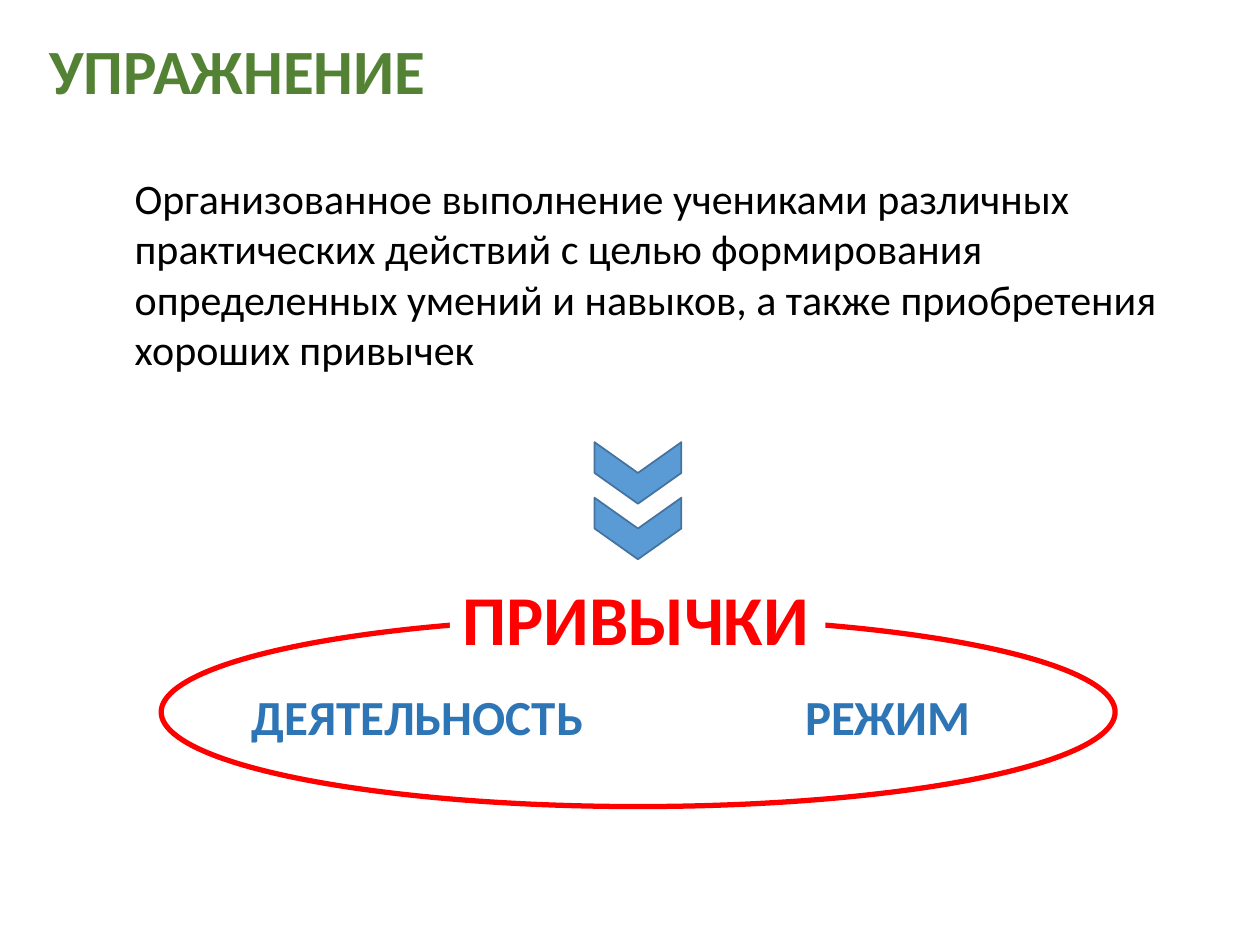
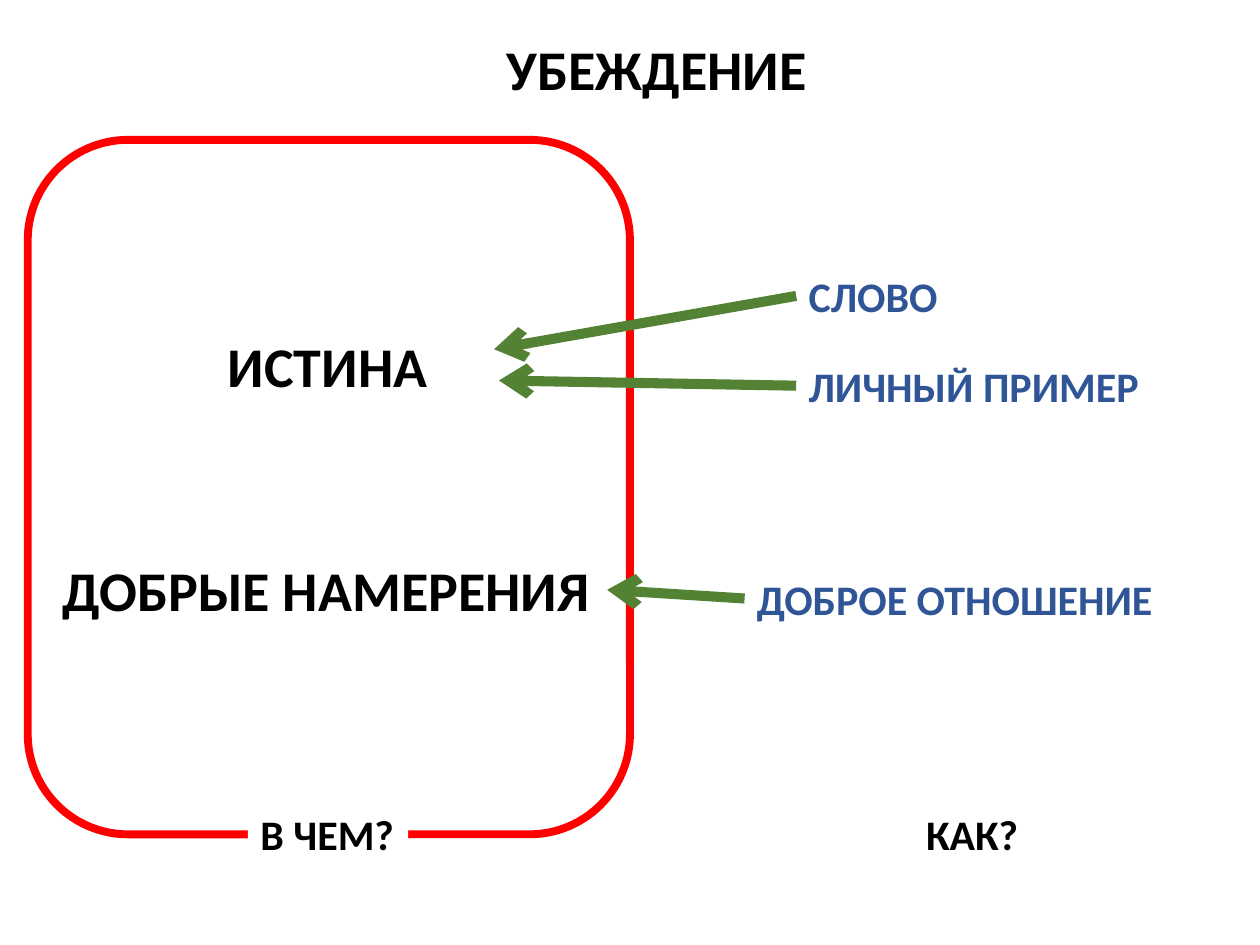
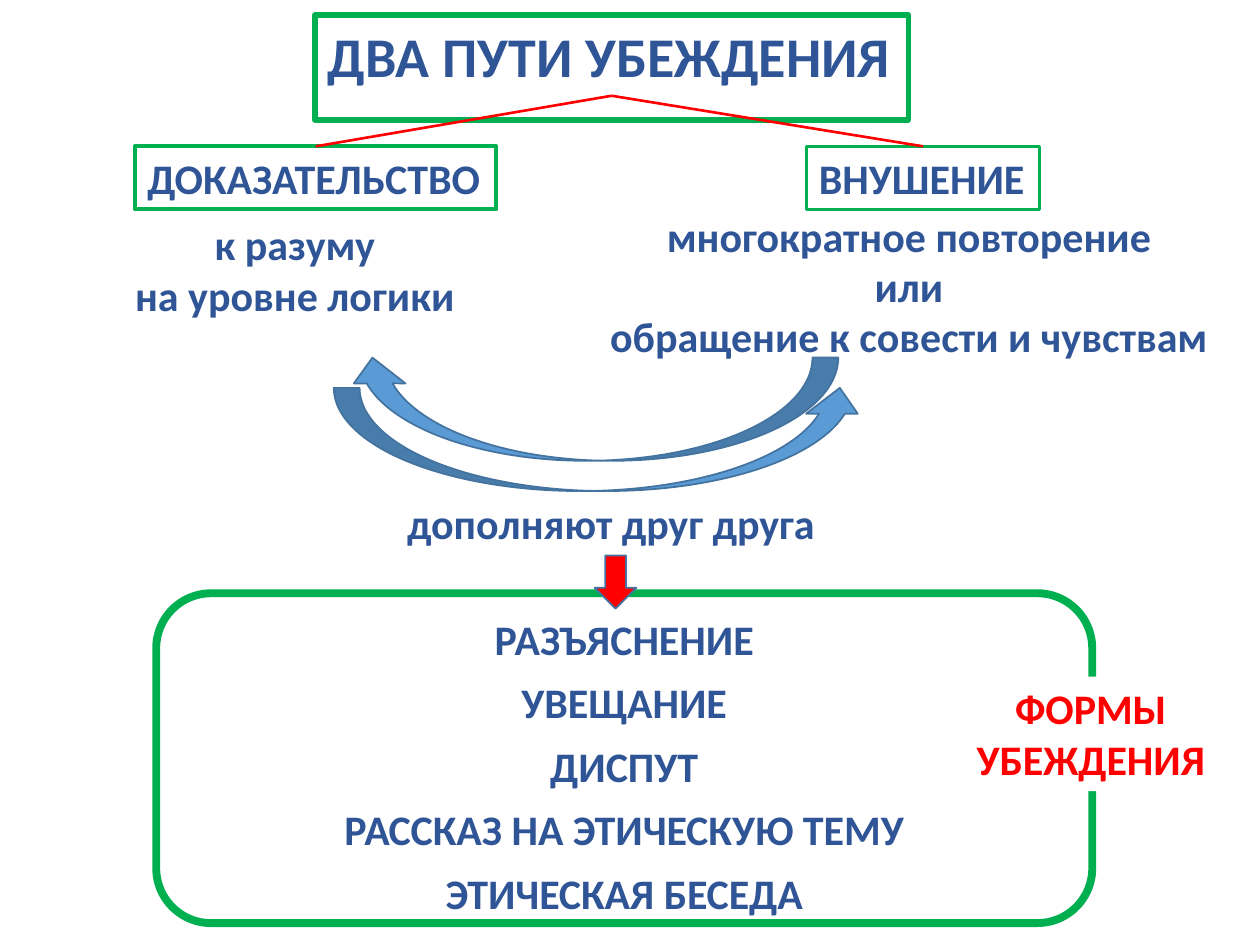
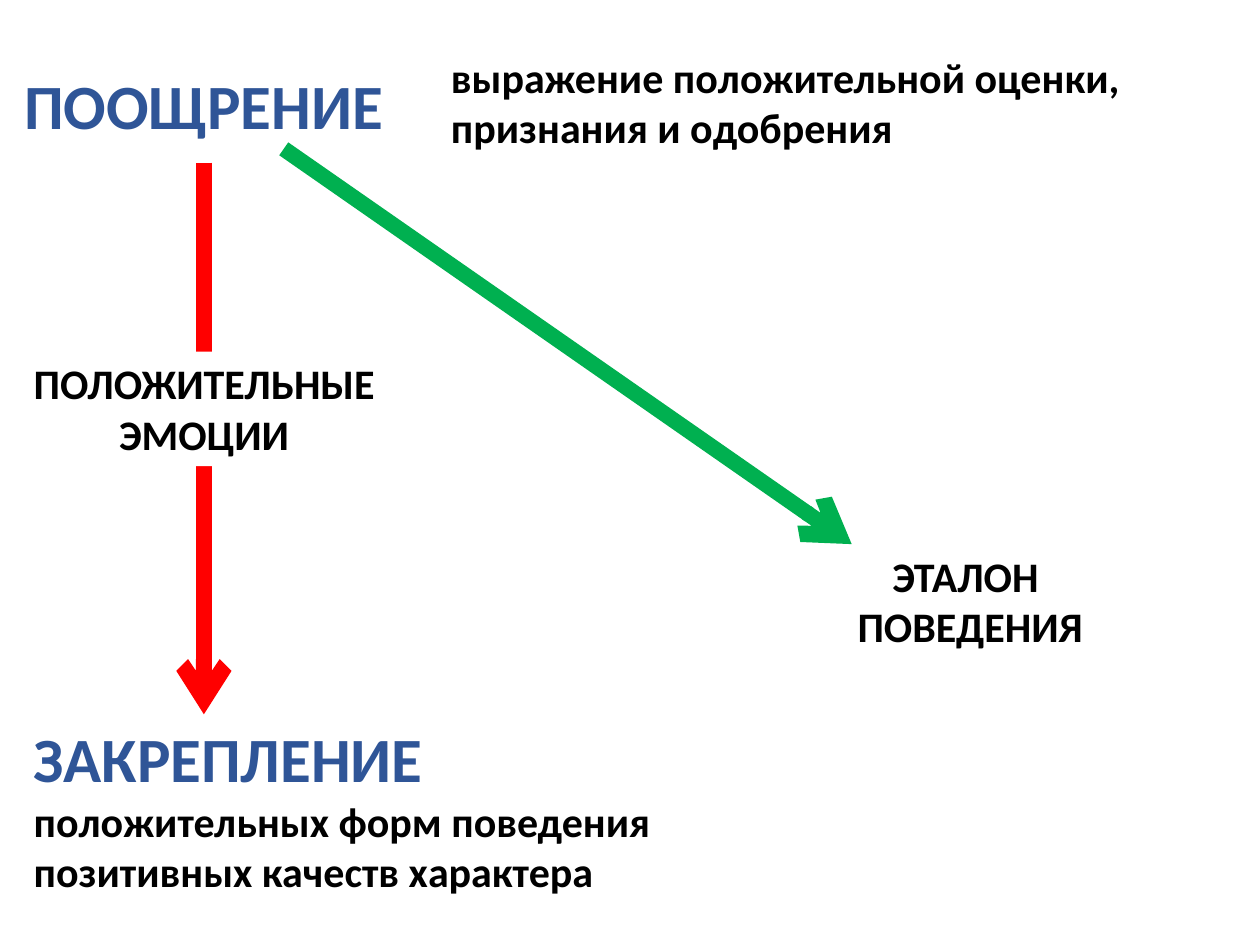
from lxml import etree
from pptx import Presentation
from pptx.dml.color import RGBColor
from pptx.enum.shapes import MSO_CONNECTOR, MSO_SHAPE
from pptx.enum.text import MSO_ANCHOR, MSO_AUTO_SIZE, PP_ALIGN
from pptx.oxml.ns import qn
from pptx.util import Cm, Pt

FONT = "Calibri"
BLACK, WHITE, RED = "000000", "FFFFFF", "FF0000"
GREEN, MOSS = "00B050", "548235"
NAVY, BLUE, SKY, STEEL = "2F5597", "2E75B6", "5B9BD5", "43739E"
LEFT, MID = PP_ALIGN.LEFT, PP_ALIGN.CENTER
TOP, FIT = MSO_ANCHOR.TOP, MSO_AUTO_SIZE.SHAPE_TO_FIT_TEXT
STRAIGHT = MSO_CONNECTOR.STRAIGHT
OVAL, ROUND = MSO_SHAPE.OVAL, MSO_SHAPE.ROUNDED_RECTANGLE
CHEVRON, DOWN, CURVE = MSO_SHAPE.CHEVRON, MSO_SHAPE.DOWN_ARROW, MSO_SHAPE.CURVED_UP_ARROW
BODY_LAYOUT, TITLE_LAYOUT = 1, 5
ROW = 1.27  # height of one 24 pt line with its margins
HEAD = 1.63  # the same for 32 pt
PAIR = 2.31  # two 24 pt lines


def rgb(code):
    return RGBColor.from_string(code)


def cms(*sizes):
    return [Cm(size) for size in sizes]


def paint(shape, fill=None, line=None, width=1):
    if fill:
        shape.fill.solid()
        shape.fill.fore_color.rgb = rgb(fill)
    else:
        shape.fill.background()
    if line:
        shape.line.color.rgb = rgb(line)
        shape.line.width = Pt(width)
    else:
        shape.line.fill.background()


def write(shape, rows, align=LEFT, wrap=False):
    """Fill a text frame with rows of (text, size, colour, bold)."""
    frame = shape.text_frame
    frame.word_wrap = wrap
    frame.auto_size = FIT
    frame.vertical_anchor = TOP
    for i, (text, size, color, bold) in enumerate(rows):
        para = frame.add_paragraph() if i else frame.paragraphs[0]
        para.alignment = align
        para.space_before = Pt(0)
        run = para.add_run()
        run.text = text
        font = run.font
        font.name, font.size, font.bold = FONT, Pt(size), bold
        font.color.rgb = rgb(color)


def label(slide, box, text, color=BLACK, size=24, align=LEFT, wrap=False,
          fill=None, line=None, width=1):
    """Add a bold text box, one paragraph for each line of text."""
    shape = slide.shapes.add_textbox(*cms(*box))
    write(shape, [(row, size, color, True) for row in text.split("\n")], align, wrap)
    paint(shape, fill, line, width)
    return shape


def form(slide, kind, box, fill=None, line=STEEL, width=1):
    shape = slide.shapes.add_shape(kind, *cms(*box))
    shape.shadow.inherit = False
    paint(shape, fill, line, width)
    return shape


def link(slide, start, end, color, width, arrow=False):
    line = slide.shapes.add_connector(STRAIGHT, *cms(*start, *end))
    line.line.color.rgb = rgb(color)
    line.line.width = Pt(width)
    props = line._element.spPr
    etree.SubElement(props, qn("a:effectLst"))
    if arrow:
        etree.SubElement(props.find(qn("a:ln")), qn("a:tailEnd"), type="arrow")
    return line


def place(shape, box):
    shape.left, shape.top, shape.width, shape.height = cms(*box)


def start(deck, layout, text, box, size, color):
    """Add a slide and set its title."""
    slide = deck.slides.add_slide(deck.slide_layouts[layout])
    title = slide.shapes.title
    place(title, box)
    write(title, [(text, size, color, True)])
    return slide


def habits(slide, x, y):
    """Ring with a heading on its rim and two words inside."""
    form(slide, OVAL, (x, y, 19.23, 3.81), line=RED, width=3)
    label(slide, (x + 5.82, y - 0.97, 7.57, 1.96), "ПРИВЫЧКИ", RED, 40, fill=WHITE)
    for text, dx, wide in (("ДЕЯТЕЛЬНОСТЬ", 1.58, 7.26), ("РЕЖИМ", 12.73, 3.89)):
        label(slide, (x + dx, y + 1.27, wide, 1.45), text, BLUE, 28)


def chevrons(slide, x, y):
    for i in range(2):
        mark = form(slide, CHEVRON, (x, y + i * 1.12, 1.24, 1.75), SKY)
        mark.rotation = 90


def exercise(deck):
    slide = start(deck, BODY_LAYOUT, "УПРАЖНЕНИЕ", (0.74, 0.51, 8.18, 1.8), 36, MOSS)
    body = slide.placeholders[1]
    place(body, (2.46, 3.35, 21.9, 4.37))
    write(body, [("Организованное выполнение учениками различных практических действий "
                  "с целью формирования определенных умений и навыков, а также "
                  "приобретения хороших привычек", 24, BLACK, False)], wrap=True)
    props = body.text_frame.paragraphs[0]._p.get_or_add_pPr()
    props.set("marL", "0")
    props.set("indent", "0")
    etree.SubElement(props, qn("a:buNone"))
    habits(slide, 3.25, 12.45)
    chevrons(slide, 12.24, 8.66)


def goals(slide, x, y):
    """Framed left side: what to convince of."""
    for text, dx, dy, wide in (("ИСТИНА", 3.78, 3.73, 4.57),
                               ("ДОБРЫЕ НАМЕРЕНИЯ", 0.46, 8.25, 11.23)):
        label(slide, (x + dx, y + dy, wide, HEAD), text, size=32)
    form(slide, ROUND, (x, y, 12.14, 14), line=RED, width=4.5)
    label(slide, (x + 4.44, y + 13.36, 3.23, ROW), "В ЧЕМ?", fill=WHITE)


def means(slide, x, y):
    """Right side: how to convince, each with an arrow to its goal."""
    label(slide, (x + 3.41, y + 10.85, 2.39, ROW), "КАК?", fill=WHITE)
    for text, dx, dy, wide, tip in (
            ("СЛОВО", 1.04, 0, 3.15, (-5.05, 1.71)),
            ("ЛИЧНЫЙ ПРИМЕР", 1.04, 1.81, 7.24, (-4.95, 2.34)),
            ("ДОБРОЕ ОТНОШЕНИЕ", 0, 6.1, 8.56, (-2.77, 6.56))):
        left, top = x + dx, y + dy
        word = label(slide, (left, top, wide, ROW), text, NAVY, fill=WHITE)
        arrow = link(slide, (left, top + ROW / 2), (x + tip[0], y + tip[1]),
                     MOSS, 5.75, True)
        arrow.begin_connect(word, 1)


def belief(deck):
    slide = start(deck, TITLE_LAYOUT, "УБЕЖДЕНИЕ", (9.96, 0.56, 6.63, HEAD), 32, BLACK)
    goals(slide, 0.56, 2.82)
    means(slide, 15.01, 5.33)


def path(slide, box, text, width, note, words):
    """One branch under the title: framed name and a note below."""
    name = label(slide, box, text, NAVY, line=GREEN, width=width)
    x, y, wide, _ = box
    line = link(slide, (0, 0), (x + wide / 2, y), RED, 1.5)
    line.begin_connect(slide.shapes.title, 2)
    line.end_connect(name, 0)
    label(slide, note, words, NAVY, align=MID)


def cycle(slide, x, y):
    """Two facing curved arrows with a caption."""
    label(slide, (x + 1.19, y + 2.7, 8.79, ROW), "дополняют друг друга", NAVY, align=MID)
    form(slide, CURVE, (x, y + 0.61, 10.72, 2.08), SKY)
    back = form(slide, CURVE, (x + 0.26, y, 9.91, 2.08), SKY)
    back._element.spPr.find(qn("a:xfrm")).set("flipH", "1")


def kinds(slide, x, y, wide, high):
    """Framed list of forms with its heading on the right edge."""
    form(slide, ROUND, (x, y, wide, high), line=GREEN, width=4.5)
    rows = (("РАЗЪЯСНЕНИЕ", 5.79), ("УВЕЩАНИЕ", 4.7), ("ДИСПУТ", 3.53),
            ("РАССКАЗ НА ЭТИЧЕСКУЮ ТЕМУ", 11.89), ("ЭТИЧЕСКАЯ БЕСЕДА", 7.8))
    for i, (text, size) in enumerate(rows):
        box = (x + (wide - size) / 2, y + 0.28 + i * 1.28, size, ROW)
        label(slide, box, text, NAVY, align=MID)
    form(slide, DOWN, (x + 8.84, y - 0.76, 0.84, 1.07), RED)
    label(slide, (x + 16.26, y + 1.68, 5.16, PAIR), "ФОРМЫ\nУБЕЖДЕНИЯ", RED,
          align=MID, fill=WHITE)


def ways(deck):
    slide = start(deck, TITLE_LAYOUT, "ДВА ПУТИ УБЕЖДЕНИЯ",
                  (6.35, 0.3, 11.96, HEAD), 32, NAVY)
    paint(slide.shapes.title, line=GREEN, width=3)
    path(slide, (2.72, 2.95, 7.29, ROW), "ДОКАЗАТЕЛЬСТВО", 2.25,
         (2.44, 4.29, 7.01, PAIR), "к разуму\nна уровне логики")
    path(slide, (16.26, 2.95, 4.7, ROW), "ВНУШЕНИЕ", 1.5, (11.99, 4.11, 12.67, 3.33),
         "многократное повторение\nили\nобращение к совести и чувствам")
    cycle(slide, 6.73, 7.21)
    kinds(slide, 3.15, 11.96, 18.87, 6.65)


def effect(slide, x, y):
    """Downward arrow through emotions to the lasting result."""
    link(slide, (x + 3.93, y), (x + 3.93, y + 11.12), RED, 9, True)
    label(slide, (x, y + 3.81, 7.87, PAIR), "ПОЛОЖИТЕЛЬНЫЕ ЭМОЦИИ",
          align=MID, wrap=True, fill=WHITE)
    result = slide.shapes.add_textbox(*cms(x + 0.25, y + 11.1, 17.15, 3.84))
    write(result, [("ЗАКРЕПЛЕНИЕ", 36, NAVY, True),
                   ("положительных форм поведения", 24, BLACK, True),
                   ("позитивных качеств характера", 24, BLACK, True)], wrap=True)


def model(slide, x, y):
    """Slanting arrow to the standard of behaviour."""
    link(slide, (x, y), (x + 11.45, y + 7.97), GREEN, 9, True)
    label(slide, (x + 11.07, y + 7.97, 5.54, PAIR), "ЭТАЛОН \nПОВЕДЕНИЯ",
          align=MID, wrap=True)


def reward(deck):
    slide = start(deck, TITLE_LAYOUT, "ПООЩРЕНИЕ", (0.23, 1.22, 7.82, 1.8), 36, NAVY)
    label(slide, (8.84, 0.91, 15.27, PAIR),
          "выражение положительной оценки, признания и одобрения", wrap=True)
    effect(slide, 0.18, 3.28)
    model(slide, 5.72, 3)


def main():
    deck = Presentation()
    deck.slide_width, deck.slide_height = cms(25.4, 19.05)
    for build in (exercise, belief, ways, reward):
        build(deck)
    deck.save("out.pptx")


if __name__ == "__main__":
    main()
